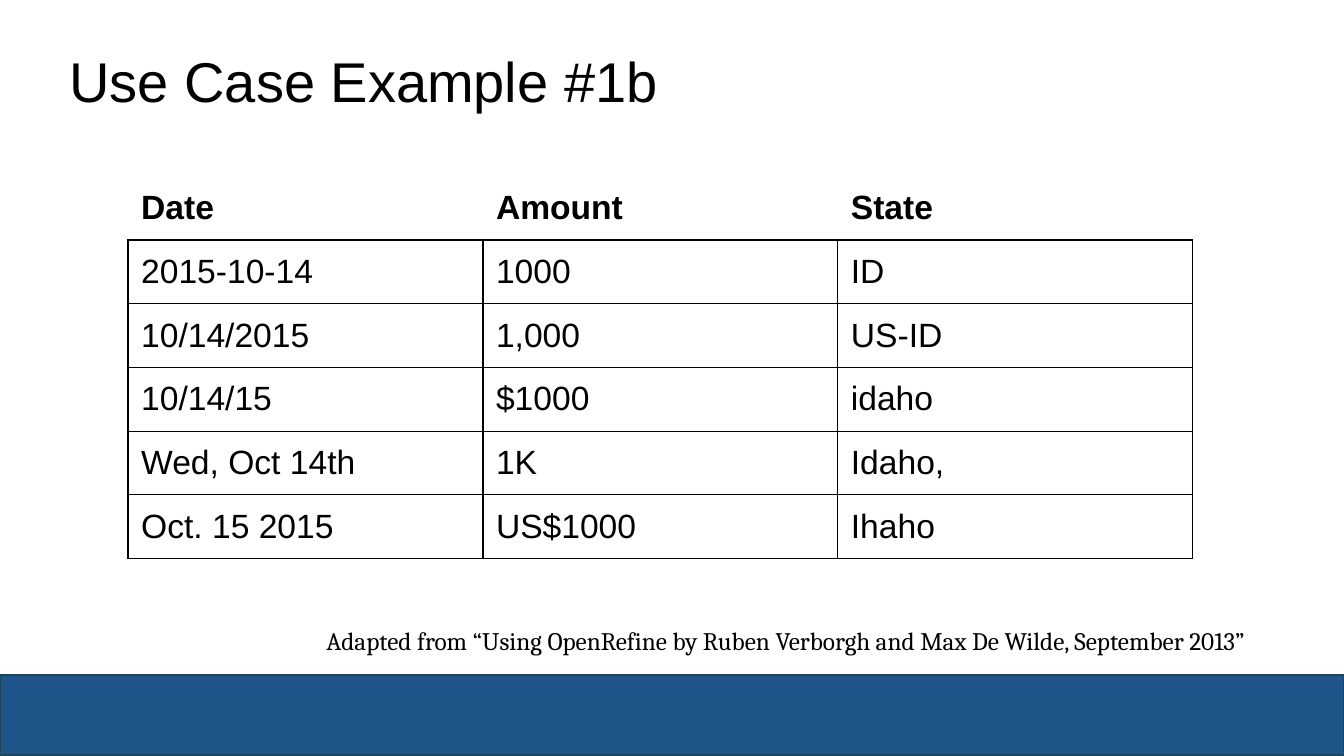
from lxml.etree import SubElement
from pptx import Presentation
from pptx.dml.color import RGBColor
from pptx.enum.shapes import MSO_SHAPE as SHAPE
from pptx.enum.text import MSO_ANCHOR as ANCHOR, PP_ALIGN as ALIGN
from pptx.oxml.ns import qn
from pptx.util import Inches, Pt

COLORS = {"text": "000000", "border": "000000", "band": "20558A", "band_line": "20455A"}
SLIDE_W, SLIDE_H = 13.33, 7.5
COL_W, ROW_H = 3.52, 0.58
CELL_INSET = 0.13
RECORDS = [
    ("Date", "Amount", "State"),
    ("2015-10-14", "1000", "ID"),
    ("10/14/2015", "1,000", "US-ID"),
    ("10/14/15", "$1000", "idaho"),
    ("Wed, Oct 14th", "1K", "Idaho,"),
    ("Oct. 15 2015", "US$1000", "Ihaho"),
]


def color(name):
    return RGBColor.from_string(COLORS[name])


def write(tf, text, size, font="Arial", bold=False):
    tf.text = text
    p = tf.paragraphs[0]
    p.alignment = ALIGN.LEFT
    r = p.runs[0]
    r.font.name = font
    r.font.size = Pt(size)
    r.font.bold = bold
    r.font.color.rgb = color("text")
    return p


def add_band(s):
    sp = s.shapes.add_shape(SHAPE.RECTANGLE, 0, Inches(6.7), Inches(SLIDE_W), Inches(0.79))
    sp.shadow.inherit = False
    sp.fill.solid()
    sp.fill.fore_color.rgb = color("band")
    sp.line.color.rgb = color("band_line")
    sp.line.width = Pt(1.5)


def set_title(s, text):
    sp = s.shapes.title
    sp.left, sp.top, sp.width, sp.height = map(Inches, (0.59, 0.61, 6.84, 0.58))
    tf = sp.text_frame
    tf.vertical_anchor = ANCHOR.BOTTOM
    write(tf, text, 40).line_spacing = 0.9


def set_borders(cell, visible):
    tcPr = cell._tc.get_or_add_tcPr()
    for i, side in enumerate(("lnL", "lnR", "lnT", "lnB")):
        ln = tcPr.makeelement(qn(f"a:{side}"), {"w": str(Pt(1))})
        if side in visible:
            fill = SubElement(ln, qn("a:solidFill"))
            SubElement(fill, qn("a:srgbClr"), val=COLORS["border"])
        else:
            SubElement(ln, qn("a:noFill"))
        tcPr.insert(i, ln)


def add_records(s, records):
    rows, cols = len(records), len(records[0])
    frame = s.shapes.add_table(rows, cols, Inches(1.27), Inches(1.75),
                               Inches(COL_W * cols), Inches(ROW_H * rows))
    table = frame.table
    table.horz_banding = False
    for i, record in enumerate(records):
        header = i == 0
        for j, value in enumerate(record):
            cell = table.cell(i, j)
            cell.margin_left = cell.margin_right = Inches(CELL_INSET)
            cell.margin_top = cell.margin_bottom = Inches(CELL_INSET)
            cell.fill.background()
            set_borders(cell, ("lnB",) if header else ("lnL", "lnR", "lnT", "lnB"))
            write(cell.text_frame, value, 24, bold=header)


def add_credit(s, text):
    sp = s.shapes.add_textbox(*map(Inches, (3.14, 6.15, 9.84, 0.54)))
    sp.text_frame.word_wrap = True
    write(sp.text_frame, text, 18, font="Cambria")


def main():
    prs = Presentation()
    prs.slide_width, prs.slide_height = Inches(SLIDE_W), Inches(SLIDE_H)
    s = prs.slides.add_slide(prs.slide_layouts.get_by_name("Title Only"))
    add_band(s)
    set_title(s, "Use Case Example #1b")
    add_records(s, RECORDS)
    add_credit(s, "Adapted from “Using OpenRefine by Ruben Verborgh and Max De Wilde, September 2013”")
    prs.save("out.pptx")


if __name__ == "__main__":
    main()
